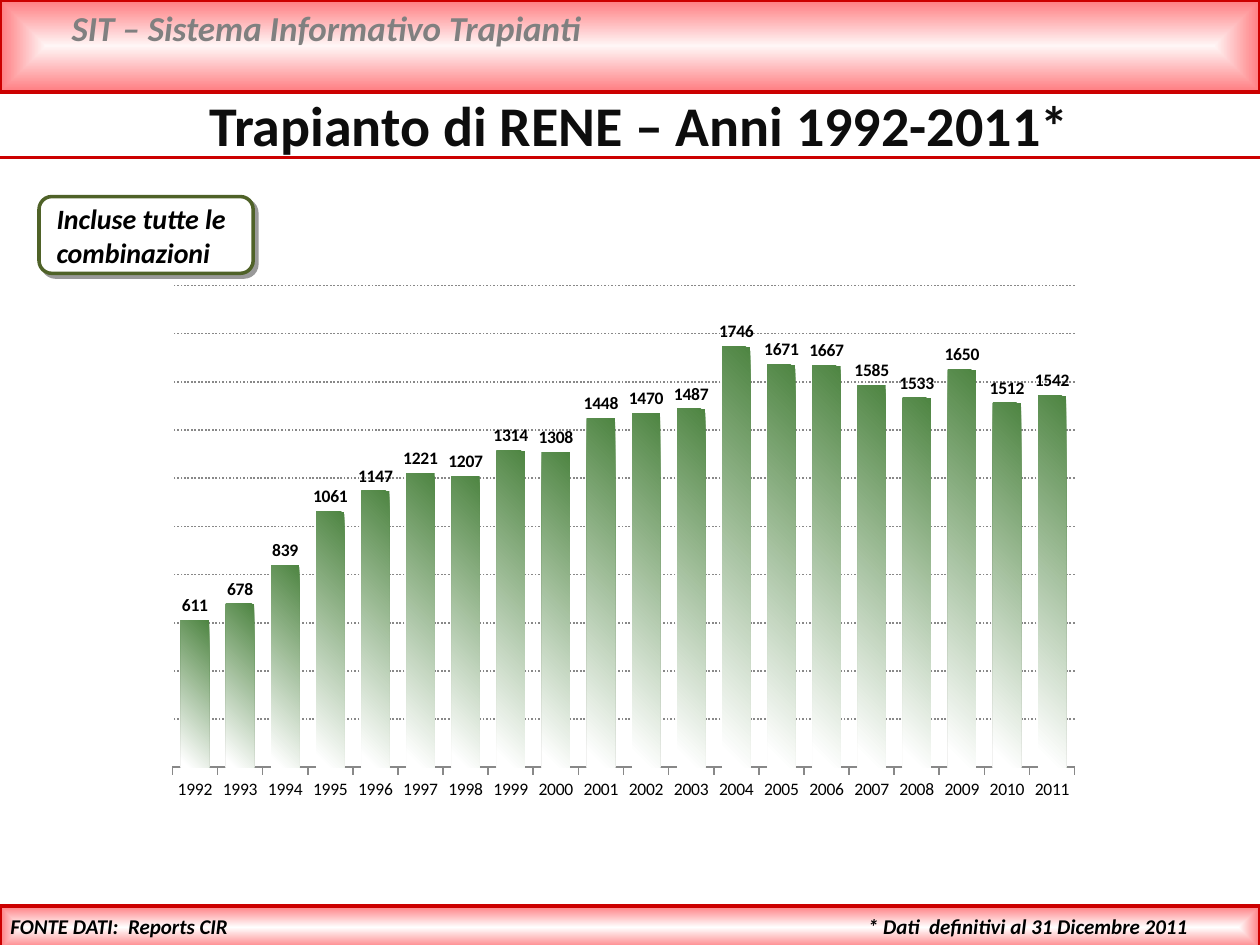
"""Build the slide on kidney transplants per year, 1992-2011."""
from dataclasses import dataclass

from lxml.etree import SubElement
from pptx import Presentation
from pptx.chart.data import CategoryChartData
from pptx.dml.color import RGBColor
from pptx.enum.chart import XL_CHART_TYPE as ChartType
from pptx.enum.chart import XL_LABEL_POSITION as LabelPosition
from pptx.enum.chart import XL_TICK_MARK as TickMark
from pptx.enum.dml import MSO_LINE as Dash
from pptx.enum.shapes import MSO_CONNECTOR as Connector
from pptx.enum.shapes import MSO_SHAPE as Shape
from pptx.enum.text import MSO_ANCHOR as Anchor
from pptx.enum.text import PP_ALIGN as Align
from pptx.oxml.ns import qn
from pptx.util import Pt


@dataclass(frozen=True)
class Theme:
    font: str = "Calibri"
    black: str = "000000"
    white: str = "FFFFFF"
    blush: str = "FFF6F6"
    pink: str = "FF7C80"
    red: str = "CC0000"
    bar_green: str = "4E8542"
    frame_green: str = "4F6228"
    title_ink: str = "0D0D0D"
    system_gray: str = "808080"
    grid_gray: str = "888888"
    title_size: int = 32
    system_size: int = 20
    note_size: int = 16
    footer_size: int = 12
    chart_size: int = 10


THEME = Theme()
SLIDE_W, SLIDE_H = 720, 540
RULE_Y = 90

TITLE = "Trapianto di RENE – Anni 1992-2011*"
TITLE_BOX = (78.5, 48.2, 573.8, 46.1)
BANDS = [
    ((0, 0, SLIDE_W, 52.6), THEME.blush),
    ((0, 517.7, SLIDE_W, 24.5), THEME.white),
]
NOTE_FRAME = (22.3, 112.3, 122.4, 43.9)
CAPTIONS = [
    ("SIT – Sistema Informativo Trapianti", (33.8, 0, 646.6, 31.7),
     THEME.system_size, THEME.system_gray, Align.LEFT, True),
    ("FONTE DATI:  Reports CIR", (-2.9, 518.4, 140.4, 21.6),
     THEME.footer_size, THEME.black, Align.RIGHT, False),
    ("* Dati  definitivi al 31 Dicembre 2011", (488.9, 518.4, 231.1, 21.6),
     THEME.footer_size, THEME.black, Align.LEFT, True),
    ("Incluse tutte le combinazioni", (25.2, 111.6, 118.8, 46.1),
     THEME.note_size, THEME.black, Align.LEFT, True),
]
FIRST_YEAR = 1992
TRANSPLANTS = [611, 678, 839, 1061, 1147, 1221, 1207, 1314, 1308, 1448,
               1470, 1487, 1746, 1671, 1667, 1585, 1533, 1650, 1512, 1542]
CHART_BOX = (87.8, 157, 537.1, 306)
PLOT_LAYOUT = {"x": 0.02, "y": 0.02, "w": 0.96, "h": 0.9}


def rgb(color):
    return RGBColor.from_string(color)


def points(box):
    return [Pt(length) for length in box]


def element(parent, tag, **attributes):
    return SubElement(parent, qn(tag), {k: str(v) for k, v in attributes.items()})


def style_line(line, color, width):
    line.color.rgb = rgb(color)
    line.width = Pt(width)


def style_font(font, size, color, bold=False, italic=False):
    font.name, font.size = THEME.font, Pt(size)
    font.bold, font.italic = bold, italic
    font.color.rgb = rgb(color)


def set_gradient(fill, properties, stops, angle=None):
    """Fill along an angle in degrees, or outward from the centre if none is given."""
    fill.solid()
    solid = properties.find(qn("a:solidFill"))
    gradient = properties.makeelement(qn("a:gradFill"), {"rotWithShape": "1"})
    stop_list = element(gradient, "a:gsLst")
    for position, color in stops:
        stop = element(stop_list, "a:gs", pos=position * 1000)
        element(stop, "a:srgbClr", val=color)
    if angle is None:
        path = element(gradient, "a:path", path="shape")
        element(path, "a:fillToRect", l=50000, t=50000, r=50000, b=50000)
    else:
        element(gradient, "a:lin", ang=angle * 60000, scaled=0)
    properties.replace(solid, gradient)


def write(frame, text, size, color, align, italic=True):
    frame.vertical_anchor = Anchor.TOP
    paragraph = frame.paragraphs[0]
    paragraph.alignment = align
    run = paragraph.add_run()
    run.text = text
    style_font(run.font, size, color, bold=True, italic=italic)


def add_title(slide):
    title = slide.shapes.title
    title.left, title.top, title.width, title.height = points(TITLE_BOX)
    write(title.text_frame, TITLE, THEME.title_size, THEME.title_ink,
          Align.CENTER, italic=False)


def add_bands(slide):
    for box, center in BANDS:
        band = slide.shapes.add_shape(Shape.RECTANGLE, *points(box))
        band.shadow.inherit = False
        set_gradient(band.fill, band._element.spPr, [(0, center), (100, THEME.pink)])
        style_line(band.line, THEME.red, 2)


def add_rule(slide):
    rule = slide.shapes.add_connector(
        Connector.STRAIGHT, *points((0, RULE_Y, SLIDE_W, RULE_Y)))
    style_line(rule.line, THEME.red, 2)
    element(rule._element.spPr, "a:effectLst")


def add_chart(slide):
    data = CategoryChartData()
    data.categories = [str(FIRST_YEAR + i) for i in range(len(TRANSPLANTS))]
    data.add_series("Trapianti", TRANSPLANTS)
    chart = slide.shapes.add_chart(
        ChartType.COLUMN_CLUSTERED, *points(CHART_BOX), data).chart
    chart.has_legend = chart.has_title = False
    style_font(chart.font, THEME.chart_size, THEME.black)

    years, counts = chart.category_axis, chart.value_axis
    years.major_tick_mark = TickMark.OUTSIDE
    style_line(years.format.line, THEME.grid_gray, 1)
    counts.minimum_scale, counts.maximum_scale, counts.major_unit = 0, 2000, 200
    counts.visible = False
    grid = counts.major_gridlines.format.line
    style_line(grid, THEME.grid_gray, 1)
    grid.dash_style = Dash.ROUND_DOT

    plot = chart.plots[0]
    plot.gap_width, plot.overlap, plot.vary_by_categories = 60, -20, False
    plot.has_data_labels = True
    labels = plot.data_labels
    labels.show_value = True
    labels.position = LabelPosition.OUTSIDE_END
    style_font(labels.font, THEME.chart_size, THEME.black, bold=True)
    bars = plot.series[0]
    bar_fill = bars.format.fill
    set_gradient(bar_fill, bars._element.find(qn("c:spPr")),
                 [(0, THEME.bar_green), (96, THEME.white)], angle=135)

    area = chart._chartSpace.chart.plotArea
    for layout in area.findall(qn("c:layout")):
        area.remove(layout)
    layout = area.makeelement(qn("c:layout"), {})
    area.insert(0, layout)
    manual = element(layout, "c:manualLayout")
    element(manual, "c:layoutTarget", val="inner")
    for side in "xy":
        element(manual, f"c:{side}Mode", val="edge")
    for side, share in PLOT_LAYOUT.items():
        element(manual, f"c:{side}", val=share)


def add_note_frame(slide):
    frame = slide.shapes.add_shape(Shape.ROUNDED_RECTANGLE, *points(NOTE_FRAME))
    frame.fill.solid()
    frame.fill.fore_color.rgb = rgb(THEME.white)
    style_line(frame.line, THEME.frame_green, 2)
    frame.shadow.inherit = False
    effects = frame._element.spPr.find(qn("a:effectLst"))
    shadow = element(effects, "a:outerShdw", blurRad=0, dist=Pt(3),
                     dir=45 * 60000, algn="tl", rotWithShape=0)
    shade = element(shadow, "a:srgbClr", val=THEME.black)
    element(shade, "a:alpha", val=40000)


def add_captions(slide):
    for text, box, size, color, align, wraps in CAPTIONS:
        frame = slide.shapes.add_textbox(*points(box)).text_frame
        frame.word_wrap = wraps
        write(frame, text, size, color, align)


def main():
    deck = Presentation()
    deck.slide_width, deck.slide_height = Pt(SLIDE_W), Pt(SLIDE_H)
    slide = deck.slides.add_slide(deck.slide_layouts.get_by_name("Title Only"))
    for add_part in (add_title, add_bands, add_rule, add_chart,
                     add_note_frame, add_captions):
        add_part(slide)
    deck.save("out.pptx")


if __name__ == "__main__":
    main()
